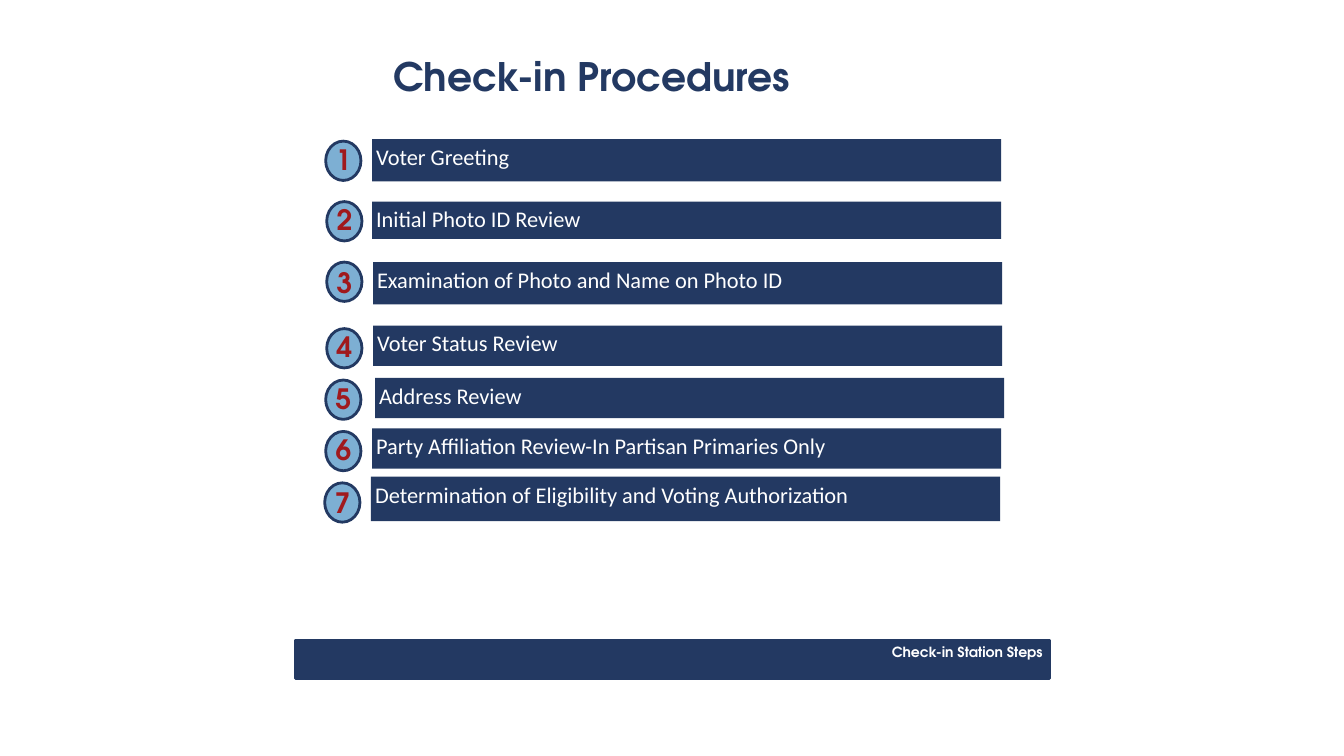
from dataclasses import dataclass

from pptx import Presentation
from pptx.dml.color import RGBColor
from pptx.enum.shapes import MSO_SHAPE
from pptx.enum.text import MSO_ANCHOR, PP_ALIGN
from pptx.util import Inches, Pt


@dataclass(frozen=True)
class Theme:
    navy: str = "233962"
    sky: str = "7DAFD3"
    red: str = "A0191D"
    white: str = "FFFFFF"
    head: str = "TeX Gyre Adventor"
    body: str = "Calibri"
    title: int = 28
    digit: int = 20
    step: int = 16
    foot: int = 10
    edge: int = 2


@dataclass(frozen=True)
class Box:
    left: float
    top: float
    width: float
    height: float

    def lengths(self) -> tuple:
        return tuple(Inches(v) for v in (self.left, self.top, self.width, self.height))


@dataclass(frozen=True)
class Font:
    name: str
    size: int
    color: str
    bold: bool = True


@dataclass(frozen=True)
class Step:
    text: str
    left: float
    top: float
    height: float
    badge: tuple[float, float]  # left and top of the oval
    rise: float = 0.03  # how far the digit box starts above the oval


THEME = Theme()
TITLE = Font(THEME.head, THEME.title, THEME.navy)
DIGIT = Font(THEME.head, THEME.digit, THEME.red)
LABEL = Font(THEME.body, THEME.step, THEME.white, False)
FOOT = Font(THEME.head, THEME.foot, THEME.white)

STEPS = [
    Step("Voter Greeting", 3.69, 1.38, 0.42, (3.23, 1.40)),
    Step("Initial Photo ID Review", 3.69, 2.00, 0.37, (3.24, 2.00)),
    Step("Examination of Photo and Name on Photo ID", 3.70, 2.60, 0.42, (3.24, 2.60), 0.01),
    Step("Voter Status Review", 3.70, 3.23, 0.40, (3.24, 3.26)),
    Step("Address Review", 3.72, 3.75, 0.40, (3.23, 3.77)),
    Step("Party Affiliation Review-In Partisan Primaries Only", 3.69, 4.25, 0.40, (3.23, 4.28)),
    Step("Determination of Eligibility and Voting Authorization", 3.68, 4.73, 0.44, (3.22, 4.79), 0.01),
]


def write(shape, text: str, font: Font, align=PP_ALIGN.LEFT) -> None:
    frame = shape.text_frame
    frame.text = text
    frame.word_wrap = True
    frame.vertical_anchor = MSO_ANCHOR.TOP
    frame.margin_left = frame.margin_right = Inches(0.04)
    frame.margin_top = frame.margin_bottom = Inches(0.04)
    line = frame.paragraphs[0]
    line.alignment = align
    for run in line.runs:
        run.font.name = font.name
        run.font.size = Pt(font.size)
        run.font.bold = font.bold
        run.font.color.rgb = RGBColor.from_string(font.color)


def label(shapes, box: Box, text: str, font: Font, align=PP_ALIGN.LEFT) -> None:
    write(shapes.add_textbox(*box.lengths()), text, font, align)


def block(shapes, kind: MSO_SHAPE, box: Box, fill: str, edged: bool):
    shape = shapes.add_shape(kind, *box.lengths())
    shape.shadow.inherit = False
    shape.fill.solid()
    shape.fill.fore_color.rgb = RGBColor.from_string(fill)
    if edged:
        shape.line.color.rgb = RGBColor.from_string(THEME.navy)
        shape.line.width = Pt(THEME.edge)
    else:
        shape.line.fill.background()
    return shape


def draw(shapes, number: int, step: Step) -> None:
    # Bar with the name of the step
    bar = Box(step.left, step.top, 6.24, step.height)
    write(block(shapes, MSO_SHAPE.RECTANGLE, bar, THEME.navy, False), step.text, LABEL)
    # Numbered badge
    left, top = step.badge
    badge = shapes.add_group_shape().shapes
    block(badge, MSO_SHAPE.FLOWCHART_CONNECTOR, Box(left, top, 0.35, 0.39), THEME.sky, True)
    label(badge, Box(left + 0.06, top - step.rise, 0.24, 0.39), str(number), DIGIT)


def main() -> None:
    deck = Presentation()
    deck.slide_width, deck.slide_height = Inches(13.33), Inches(7.5)
    shapes = deck.slides.add_slide(deck.slide_layouts[6]).shapes

    # Footer band
    block(shapes, MSO_SHAPE.RECTANGLE, Box(2.93, 6.35, 7.48, 0.38), THEME.navy, True)
    label(shapes, Box(4.21, 6.34, 6.17, 0.39), "Check-in Station Steps", FOOT, PP_ALIGN.RIGHT)

    # Title
    label(shapes, Box(3.86, 0.48, 6.21, 0.5), "Check-in Procedures", TITLE)

    # Steps
    for number, step in enumerate(STEPS, 1):
        draw(shapes, number, step)

    deck.save("out.pptx")


if __name__ == "__main__":
    main()
